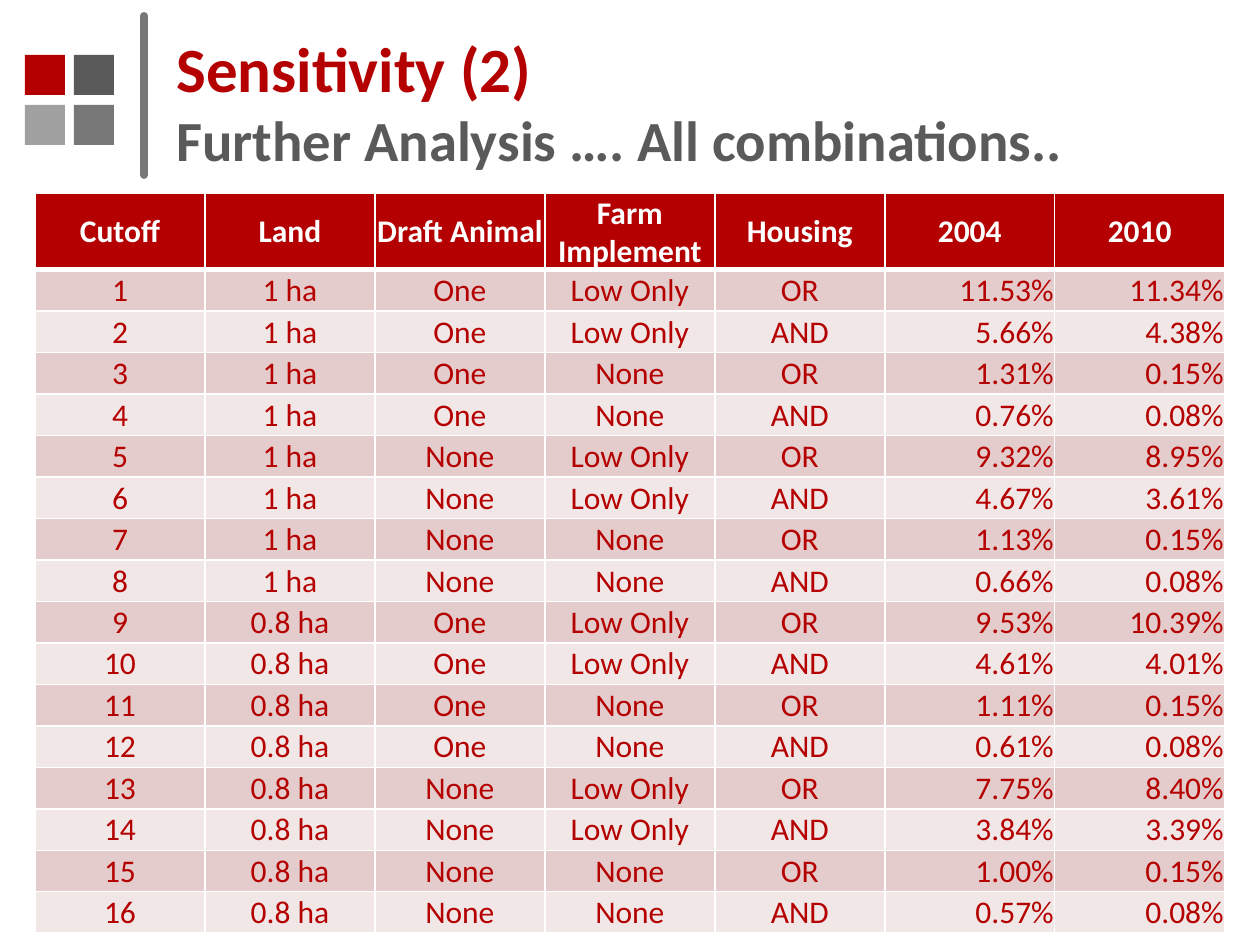
from itertools import product

from lxml.etree import SubElement
from pptx import Presentation
from pptx.dml.color import RGBColor
from pptx.enum.shapes import MSO_CONNECTOR, MSO_SHAPE
from pptx.enum.text import MSO_ANCHOR, PP_ALIGN
from pptx.oxml import parse_xml
from pptx.oxml.ns import nsdecls, qn
from pptx.util import Pt

PX = 914400 // 126
COLORS = {
    "red": "B40000", "dark": "5A5A5A", "mid": "787878", "light": "A0A0A0",
    "white": "FFFFFF", "odd": "E5CCCC", "even": "F2E7E7",
}


def rgb(name):
    return RGBColor.from_string(COLORS[name])


def add_run(paragraph, text, size, color, bold):
    run = paragraph.add_run()
    run.text = text
    run.font.name = "Calibri"
    run.font.size = Pt(size)
    run.font.bold = bold
    run.font.color.rgb = rgb(color)


deck = Presentation()
deck.slide_width, deck.slide_height = 1260 * PX, 945 * PX
slide = deck.slides.add_slide(deck.slide_layouts[6])
shapes = slide.shapes

# Emblem of four squares
for (top, left), color in zip(product((55, 105), (25, 74)),
                              ("red", "dark", "light", "mid")):
    square = shapes.add_shape(MSO_SHAPE.RECTANGLE, left * PX, top * PX, 40 * PX, 40 * PX)
    square.shadow.inherit = False
    square.fill.solid()
    square.fill.fore_color.rgb = rgb(color)
    square.line.fill.background()

# Upright rule with round ends
rule = shapes.add_connector(MSO_CONNECTOR.STRAIGHT, 144 * PX, 16 * PX, 144 * PX, 175 * PX)
rule.line.color.rgb = rgb("mid")
rule.line.width = Pt(4.5)
rule.line._get_or_add_ln().set("cap", "rnd")
SubElement(rule._element.spPr, qn("a:effectLst"))

# Title
title = shapes.add_textbox(164 * PX, 37 * PX, 1003 * PX, 128 * PX).text_frame
title.word_wrap = True
title.vertical_anchor = MSO_ANCHOR.MIDDLE
heading = title.paragraphs[0]
add_run(heading, "Sensitivity (2)", 36, "red", True)
heading.add_line_break()
add_run(heading, "Further Analysis …. All combinations..", 32.4, "dark", True)

# Table content: every combination of the four criteria, with its two shares
headers = ["Cutoff", "Land", "Draft Animal", "Farm Implement", "Housing", "2004", "2010"]
criteria = product(("1 ha", "0.8 ha"), ("One", "None"), ("Low Only", "None"), ("OR", "AND"))
shares = [
    ("11.53%", "11.34%"), ("5.66%", "4.38%"), ("1.31%", "0.15%"), ("0.76%", "0.08%"),
    ("9.32%", "8.95%"), ("4.67%", "3.61%"), ("1.13%", "0.15%"), ("0.66%", "0.08%"),
    ("9.53%", "10.39%"), ("4.61%", "4.01%"), ("1.11%", "0.15%"), ("0.61%", "0.08%"),
    ("7.75%", "8.40%"), ("3.84%", "3.39%"), ("1.00%", "0.15%"), ("0.57%", "0.08%"),
]
rows = [headers]
for cutoff, (combination, share) in enumerate(zip(criteria, shares), start=1):
    rows.append([str(cutoff), *combination, *share])

# Table
table = shapes.add_table(len(rows), len(headers), 35 * PX, 193 * PX, 1190 * PX, 727 * PX).table
table.horz_banding = False
for column in table.columns:
    column.width = 170 * PX
for r, row in enumerate(rows):
    is_header = r == 0
    table.rows[r].height = 63 * PX if is_header else 664 * PX // len(shares)
    for c, text in enumerate(row):
        cell = table.cell(r, c)
        cell.vertical_anchor = MSO_ANCHOR.MIDDLE
        cell.margin_left = cell.margin_right = cell.margin_top = PX
        cell.margin_bottom = 0
        cell.fill.solid()
        cell.fill.fore_color.rgb = rgb("red" if is_header else "odd" if r % 2 else "even")
        entry = cell.text_frame.paragraphs[0]
        is_share = c >= 5 and not is_header
        entry.alignment = PP_ALIGN.RIGHT if is_share else PP_ALIGN.CENTER
        add_run(entry, text, 18, "white" if is_header else "red", is_header)
        # White borders, heavier below the header; they come before the fill
        widths = {"L": 1, "R": 1, "T": 3 if r == 1 else 1, "B": 3 if is_header else 1}
        for position, (side, width) in enumerate(widths.items()):
            border = parse_xml(
                f'<a:ln{side} {nsdecls("a")} w="{Pt(width)}"><a:solidFill>'
                f'<a:srgbClr val="{COLORS["white"]}"/></a:solidFill></a:ln{side}>')
            cell._tc.tcPr.insert(position, border)

deck.save("out.pptx")
